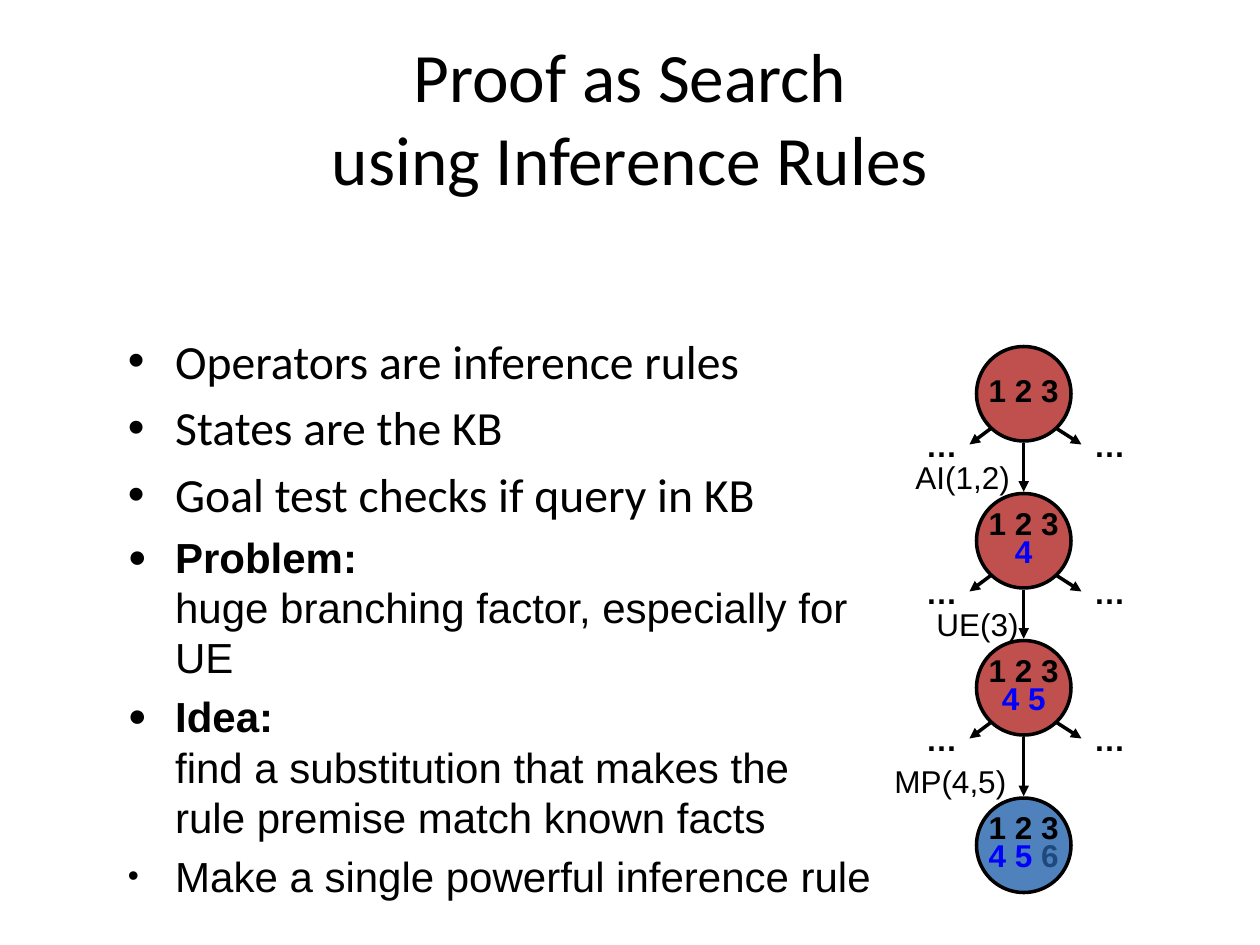
from lxml import etree
from pptx import Presentation
from pptx.dml.color import RGBColor
from pptx.enum.shapes import MSO_CONNECTOR, MSO_SHAPE
from pptx.enum.text import MSO_ANCHOR, MSO_AUTO_SIZE, PP_ALIGN
from pptx.oxml.ns import qn
from pptx.util import Pt

LINE = MSO_CONNECTOR.STRAIGHT
OVAL = MSO_SHAPE.OVAL
MIDDLE = MSO_ANCHOR.MIDDLE
CENTER = PP_ALIGN.CENTER
GROW = MSO_AUTO_SIZE.SHAPE_TO_FIT_TEXT

BLACK, NEW, GOAL = "000000", "0000FF", "1F497D"
RED, BLUE = "C0504D", "4F81BD"
SIZE = 54
INDENT = 27


def color(text):
    return RGBColor.from_string(text)


def style(run, font, size, bold=False, ink=BLACK):
    run.font.name = font
    run.font.size = Pt(size)
    run.font.bold = bold
    run.font.color.rgb = color(ink)


def add_box(shapes, left, top, width, height, wrap=True):
    box = shapes.add_textbox(Pt(left), Pt(top), Pt(width), Pt(height))
    box.text_frame.word_wrap = wrap
    return box.text_frame


def add_bullet(para, char, scale):
    props = para._p.get_or_add_pPr()
    props.set("marL", str(Pt(INDENT)))
    props.set("indent", str(Pt(-INDENT)))
    if scale:
        ink = etree.SubElement(props, qn("a:buClr"))
        etree.SubElement(ink, qn("a:srgbClr"), val=BLACK)
        etree.SubElement(props, qn("a:buSzPct"), val=str(scale * 1000))
    etree.SubElement(props, qn("a:buFont"), typeface="Arial")
    etree.SubElement(props, qn("a:buChar"), char=char)


def add_title(shapes, left, top, width, height):
    frame = add_box(shapes, left, top, width, height)
    frame.vertical_anchor = MIDDLE
    para = frame.paragraphs[0]
    para.text = "Proof as Search\vusing Inference Rules"
    para.alignment = CENTER
    for run in para.runs:
        style(run, "Calibri", 39.6)


def add_list(shapes, left, top, width, height, items, font, size, scale=None):
    """Items are (bullet, text); a first line ending in a colon is bold."""
    frame = add_box(shapes, left, top, width, height)
    frame.text = "\n".join(text for _, text in items)
    for para, (char, _) in zip(frame.paragraphs, items):
        para.space_before = Pt(size * 0.2)
        add_bullet(para, char, scale)
        for run in para.runs:
            style(run, font, size, run.text.endswith(":"))


def add_label(shapes, left, top, width, text, bold=False):
    frame = add_box(shapes, left, top, width, 29, False)
    frame.auto_size = GROW
    frame.text = text
    style(frame.paragraphs[0].runs[0], "Arial", 18, bold)


def add_arrow(shapes, x1, y1, x2, y2):
    line = shapes.add_connector(LINE, Pt(x1), Pt(y1), Pt(x2), Pt(y2))
    line.line.color.rgb = color(BLACK)
    line.line.width = Pt(2)
    stroke = line.line._get_or_add_ln()
    etree.SubElement(stroke, qn("a:tailEnd"), type="triangle")
    etree.SubElement(line._element.spPr, qn("a:effectLst"))


def add_state(shapes, left, top, fill, added="", goal=""):
    """Circle with the three given facts, the added ones and the goal."""
    node = shapes.add_shape(OVAL, Pt(left), Pt(top), Pt(SIZE), Pt(SIZE))
    node.shadow.inherit = False
    node.fill.solid()
    node.fill.fore_color.rgb = color(fill)
    node.line.color.rgb = color(BLACK)
    node.line.width = Pt(2)
    frame = node.text_frame
    frame.word_wrap = False
    frame.vertical_anchor = MIDDLE
    para = frame.paragraphs[0]
    para.text = "1 2 3" + ("\v" + added if added else "")
    if goal:
        para.add_run().text = goal
    para.alignment = CENTER
    para.line_spacing = 0.75
    for run, ink in zip(para.runs, (BLACK, NEW, GOAL)):
        style(run, "Arial", 18, True, ink)


def add_step(shapes, left, top, next_top, added, rule, label):
    """State, its branches and the named arrow to the next state."""
    group = shapes.add_group_shape().shapes
    middle = left + SIZE / 2
    add_state(group, left, top, RED, added)
    add_arrow(group, middle, top + SIZE + 1, middle, next_top - 1)
    add_arrow(group, left + 46, top + 47, left + 60, top + 56)
    add_arrow(group, left + 8, top + 47, left - 4, top + 56)
    for shift in (-36, 60):
        add_label(group, left + shift, top + 42, 32, "…", True)
    x, y, width = label
    add_label(group, x, y, width, rule)


def add_search(shapes, left, top):
    tops = [top, top + 84, top + 168, top + 258]
    steps = [
        ("", "AI(1,2)", (516, 258, 69)),
        ("4", "UE(3)", (528, 342, 62)),
        ("4 5", "MP(4,5)", (504, 432, 81)),
    ]
    for start, end, step in zip(tops, tops[1:], steps):
        add_step(shapes, left, start, end, *step)
    add_state(shapes, left, tops[-1], BLUE, "4 5 ", "6")


def main():
    deck = Presentation()
    deck.slide_width, deck.slide_height = Pt(720), Pt(540)
    shapes = deck.slides.add_slide(deck.slide_layouts[6]).shapes
    add_title(shapes, 36, 21.6, 648, 90)
    basics = [
        ("•", "Operators are inference rules"),
        ("•", "States are the KB"),
        ("•", "Goal test checks if query in KB"),
    ]
    add_list(shapes, 66, 186, 444, 108, basics, "Calibri", 27.2)
    add_search(shapes, 558, 198)
    ideas = [
        ("●", "Problem:\vhuge branching factor, especially for UE"),
        ("●", "Idea:\vfind a substitution that makes the"
              "\vrule premise match known facts"),
        ("•", "Make a single powerful inference rule"),
    ]
    add_list(shapes, 66, 300, 444, 210, ideas, "Arial", 24, 75)
    deck.save("out.pptx")


if __name__ == "__main__":
    main()
